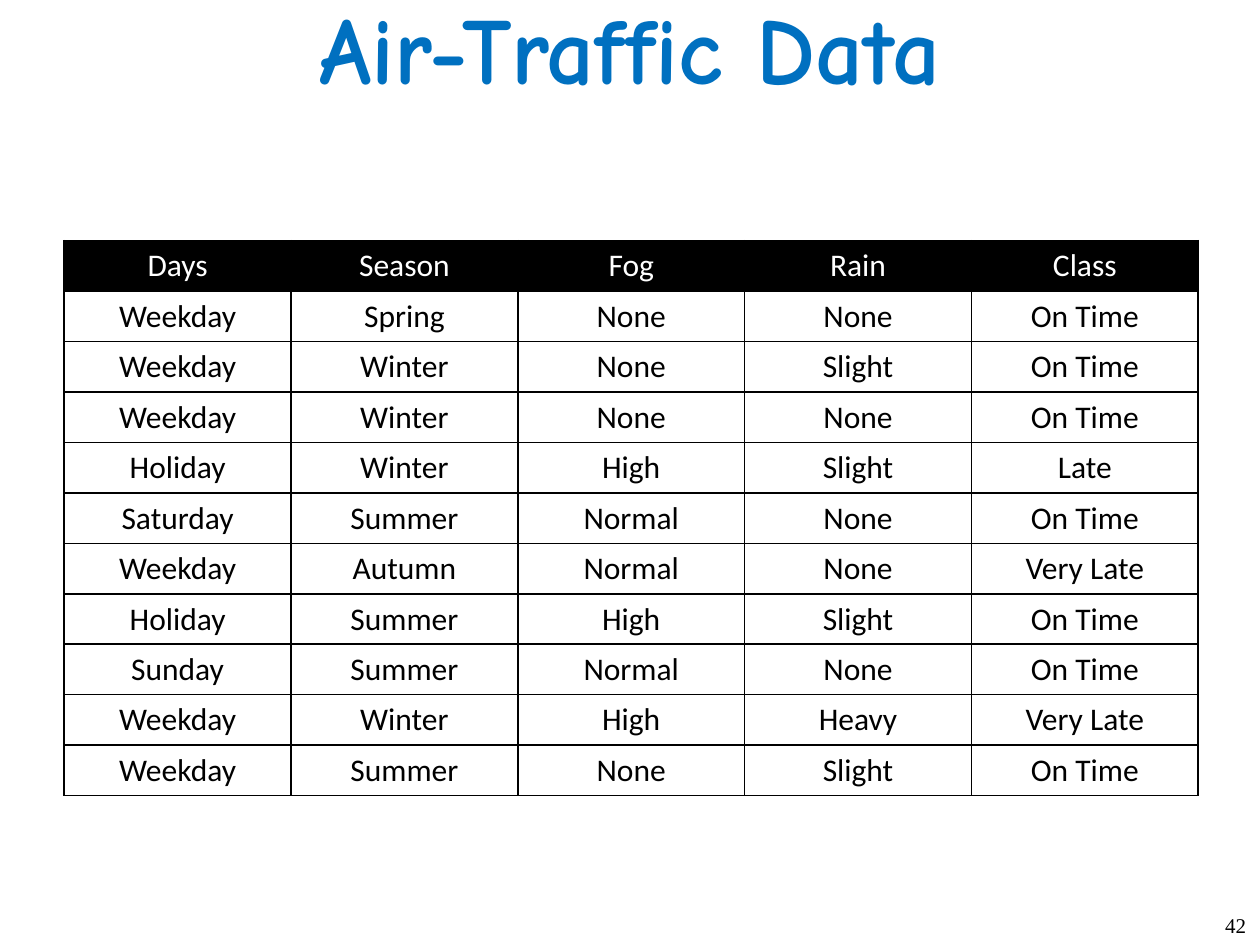
import pptx
import pptx.util
import pptx.dml.color
import pptx.enum.text
import lxml.etree
from pptx.oxml.ns import qn

Pt = pptx.util.Pt
COLORS = {"title": "0070C0", "header": "000000", "header_text": "FFFFFF", "text": "000000", "border": "000000"}
ALIGN = pptx.enum.text.PP_ALIGN
MIDDLE = pptx.enum.text.MSO_ANCHOR.MIDDLE
FORMATS = {
    "title": {"name": "Comic Neue", "size": Pt(54), "bold": True},
    "table": {"name": "Calibri", "size": Pt(18), "bold": False},
    "number": {"name": "Times New Roman", "size": Pt(12), "bold": False},
}
ROWS = [
    ["Days", "Season", "Fog", "Rain", "Class"],
    ["Weekday", "Spring", "None", "None", "On Time"],
    ["Weekday", "Winter", "None", "Slight", "On Time"],
    ["Weekday", "Winter", "None", "None", "On Time"],
    ["Holiday", "Winter", "High", "Slight", "Late"],
    ["Saturday", "Summer", "Normal", "None", "On Time"],
    ["Weekday", "Autumn", "Normal", "None", "Very Late"],
    ["Holiday", "Summer", "High", "Slight", "On Time"],
    ["Sunday", "Summer", "Normal", "None", "On Time"],
    ["Weekday", "Winter", "High", "Heavy", "Very Late"],
    ["Weekday", "Summer", "None", "Slight", "On Time"],
]


def write_text(text_frame, text, style, color, alignment):
    paragraph = text_frame.paragraphs[0]
    paragraph.alignment = alignment
    run = paragraph.add_run()
    run.text = text
    for attribute, value in FORMATS[style].items():
        setattr(run.font, attribute, value)
    run.font.color.rgb = pptx.dml.color.RGBColor.from_string(COLORS[color])
    return paragraph


def add_borders(cell):
    properties = cell._tc.get_or_add_tcPr()
    for side in ("lnL", "lnR", "lnT", "lnB"):
        line = lxml.etree.SubElement(properties, qn(f"a:{side}"), w=str(Pt(1)))
        fill = lxml.etree.SubElement(line, qn("a:solidFill"))
        lxml.etree.SubElement(fill, qn("a:srgbClr"), val=COLORS["border"])


presentation = pptx.Presentation()
presentation.slide_width = Pt(720)
presentation.slide_height = Pt(540)
slide = presentation.slides.add_slide(presentation.slide_layouts[6])

title = slide.shapes.add_textbox(Pt(0), Pt(0), Pt(720), Pt(61.2))
title.text_frame.word_wrap = True
title.text_frame.vertical_anchor = MIDDLE
write_text(title.text_frame, "Air-Traffic Data", "title", "title", ALIGN.CENTER).line_spacing = 0.9

table = slide.shapes.add_table(len(ROWS), len(ROWS[0]), Pt(36.7), Pt(137.5), Pt(648), Pt(28.8 * len(ROWS))).table
for attribute, value in {"first_row": False, "horz_banding": False}.items():
    setattr(table, attribute, value)
for column in table.columns:
    column.width = Pt(129.6)
for row_index, values in enumerate(ROWS):
    table.rows[row_index].height = Pt(28.8)
    for column_index, value in enumerate(values):
        cell = table.cell(row_index, column_index)
        add_borders(cell)
        if row_index == 0:
            cell.fill.solid()
            cell.fill.fore_color.rgb = pptx.dml.color.RGBColor.from_string(COLORS["header"])
        else:
            cell.fill.background()
        color = "header_text" if row_index == 0 else "text"
        write_text(cell.text_frame, value, "table", color, ALIGN.CENTER)

number = slide.shapes.add_textbox(Pt(648), Pt(517.7), Pt(72), Pt(22.3))
number.text_frame.word_wrap = True
number.text_frame.vertical_anchor = MIDDLE
for attribute in ("margin_left", "margin_right"):
    setattr(number.text_frame, attribute, Pt(7.9))
write_text(number.text_frame, "42", "number", "text", ALIGN.RIGHT)

presentation.save("out.pptx")
